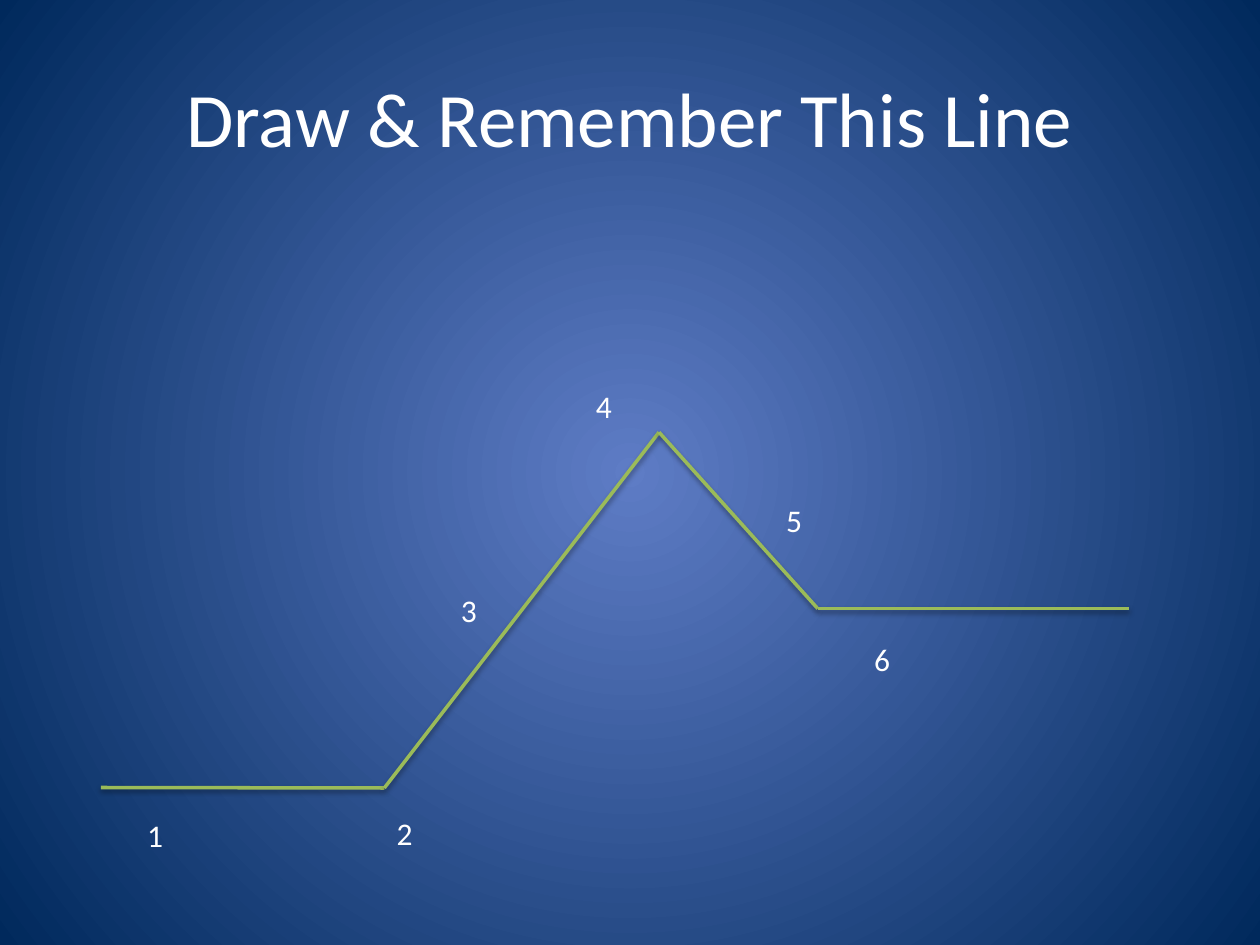
from dataclasses import dataclass

from lxml.etree import SubElement
from pptx import Presentation
from pptx.dml.color import RGBColor
from pptx.enum.shapes import MSO_CONNECTOR
from pptx.enum.text import MSO_ANCHOR, MSO_AUTO_SIZE, PP_ALIGN
from pptx.oxml.ns import qn
from pptx.util import Pt


@dataclass(frozen=True)
class Theme:
    font: str = "Calibri"
    title_size: float = 44
    label_size: float = 18
    text: str = "FFFFFF"
    line: str = "9BBB59"
    line_width: float = 2
    shadow: str = "000000"
    glow: str = "5E7CC5"
    edge: str = "00295C"


class SlideBuilder:
    def __init__(self, s, theme):
        self.s = s
        self.theme = theme

    def background(self):
        fill = self.s.background.fill
        fill.gradient()
        colors = (self.theme.glow, self.theme.edge)
        for stop, color, position in zip(fill.gradient_stops, colors, (0, 1)):
            stop.color.rgb = RGBColor.from_string(color)
            stop.position = position
        # Turn the linear gradient into a circular one from the centre
        grad = next(self.s.element.iter(qn("a:gradFill")))
        grad.remove(grad.find(qn("a:lin")))
        circle = SubElement(grad, qn("a:path"), path="circle")
        SubElement(circle, qn("a:fillToRect"),
                   {side: "50000" for side in "ltrb"})

    def style(self, p, size):
        p.font.name = self.theme.font
        p.font.size = Pt(size)
        p.font.color.rgb = RGBColor.from_string(self.theme.text)

    def title(self, text, left, top, width, height):
        sp = self.s.shapes.title
        sp.left, sp.top, sp.width, sp.height = map(Pt, (left, top, width, height))
        tf = sp.text_frame
        tf.text = text
        tf.vertical_anchor = MSO_ANCHOR.MIDDLE
        p = tf.paragraphs[0]
        p.alignment = PP_ALIGN.CENTER
        self.style(p, self.theme.title_size)

    def line(self, start, end):
        cxn = self.s.shapes.add_connector(
            MSO_CONNECTOR.STRAIGHT, *map(Pt, (*start, *end)))
        cxn.line.color.rgb = RGBColor.from_string(self.theme.line)
        cxn.line.width = Pt(self.theme.line_width)
        # Soft shadow straight below the line
        effects = SubElement(cxn.element.spPr, qn("a:effectLst"))
        shadow = SubElement(effects, qn("a:outerShdw"), blurRad=str(Pt(3.1)),
                            dist=str(Pt(1.6)), dir="5400000", rotWithShape="0")
        color = SubElement(shadow, qn("a:srgbClr"), val=self.theme.shadow)
        SubElement(color, qn("a:alpha"), val="38000")

    def label(self, text, left, top, width=23.76, height=28.8):
        sp = self.s.shapes.add_textbox(*map(Pt, (left, top, width, height)))
        tf = sp.text_frame
        tf.word_wrap = False
        tf.auto_size = MSO_AUTO_SIZE.SHAPE_TO_FIT_TEXT
        tf.text = text
        self.style(tf.paragraphs[0], self.theme.label_size)


def main():
    prs = Presentation()
    prs.slide_width, prs.slide_height = Pt(720), Pt(540)
    title_only = prs.slide_layouts[5]
    slide = SlideBuilder(prs.slides.add_slide(title_only), Theme())

    # Background and title
    slide.background()
    slide.title("Draw & Remember This Line", 36, 21.6, 648, 90)

    # The line to remember, segment by segment
    corners = [(57.6, 450), (219.6, 450.3), (376.6, 247),
               (467.3, 347.8), (645.1, 347.8)]
    for start, end in zip(corners, corners[1:]):
        slide.line(start, end)

    # Numbers along the line
    label_spots = [(77, 463), (219.6, 461.5), (256.3, 334.1),
                   (333.4, 217.4), (442.1, 283), (492.5, 362.2)]
    for number, spot in enumerate(label_spots, start=1):
        slide.label(str(number), *spot)

    prs.save("out.pptx")


if __name__ == "__main__":
    main()
